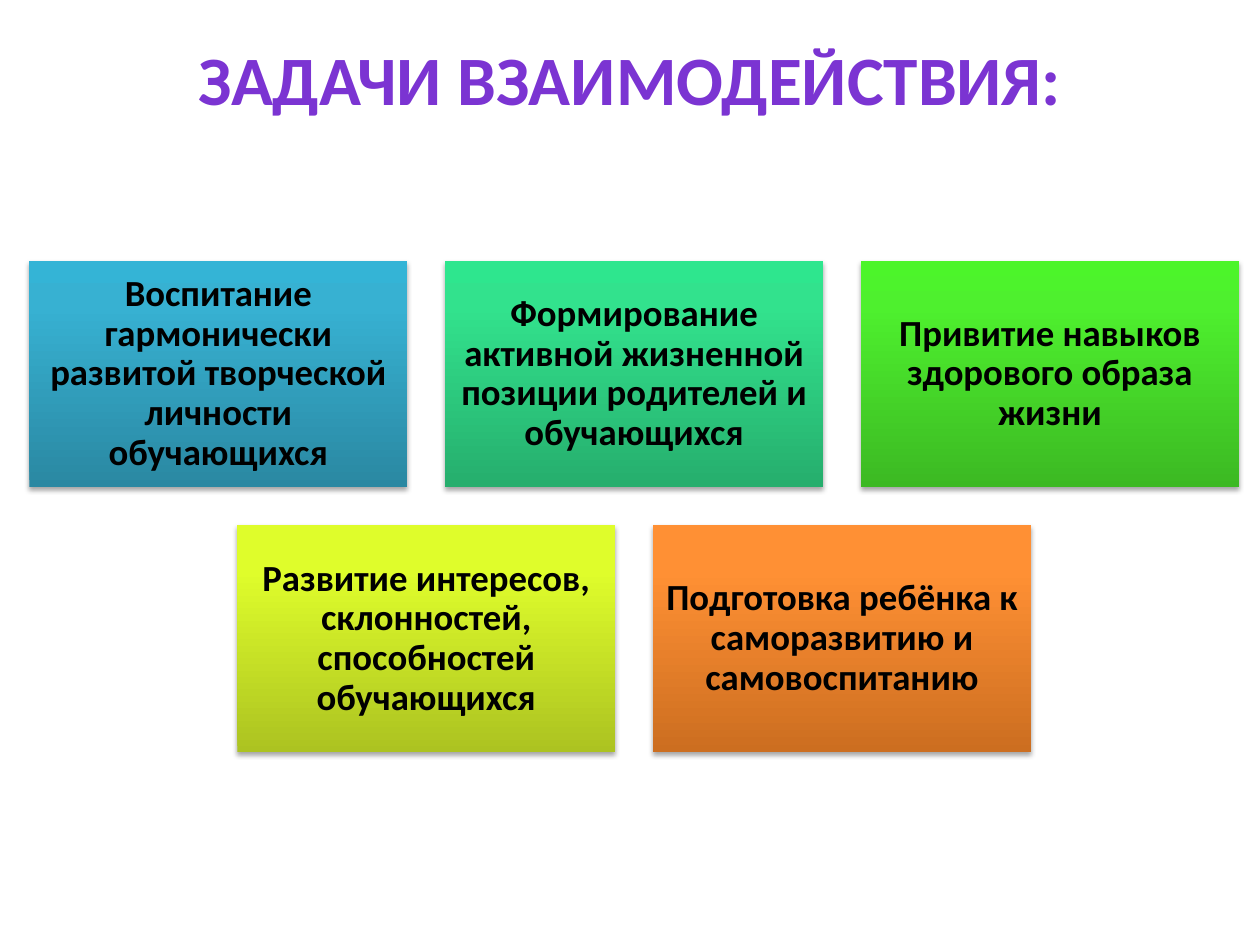
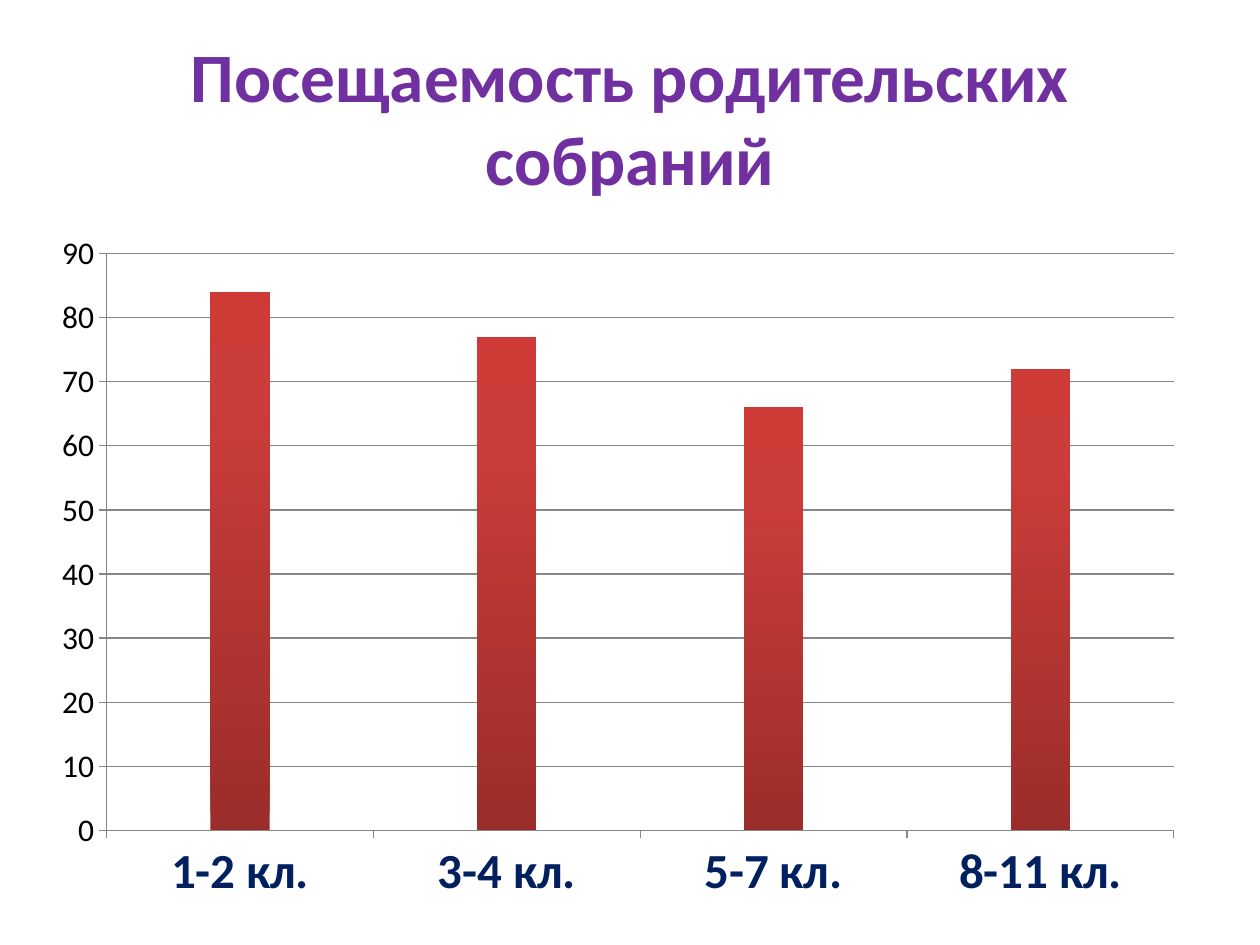
"""Build two slides on cooperation between school and parents."""
from copy import deepcopy
from dataclasses import dataclass

from lxml import etree
from pptx import Presentation
from pptx.chart.data import CategoryChartData
from pptx.dml.color import RGBColor
from pptx.dml.fill import FillFormat
from pptx.enum import chart as ch, shapes, text
from pptx.oxml.ns import qn
from pptx.slide import Slide
from pptx.text.text import TextFrame
from pptx.util import Pt

FONT = "Calibri"
BLACK, NAVY, VIOLET, PURPLE, GRAY = "000000", "002060", "7B34D2", "7030A0", "868686"
BAR_RED = ("9B2D2A", "CB3D3A", "CE3B37")
STOPS = (0, 0.8, 1)

CARD_W, CARD_H, GAP = 216, 129.6, 21.6
CARDS_CENTER, CARDS_TOP = 362.4, 149


@dataclass
class Card:
    """A task and the bottom-to-top colours of its card."""
    task: str
    colors: tuple[str, str, str]


CARD_ROWS = (
    (
        Card("Воспитание гармонически развитой творческой личности обучающихся",
             ("2A88A2", "37B1D2", "34B4D6")),
        Card("Формирование активной жизненной позиции родителей и обучающихся",
             ("26AE6D", "32E28D", "2EE68E")),
        Card("Привитие навыков здорового образа жизни",
             ("3CB923", "4EF02E", "4CF52A")),
    ),
    (
        Card("Развитие интересов, склонностей, способностей обучающихся",
             ("ACC321", "DFFD2B", "E1FF2B")),
        Card("Подготовка ребёнка к саморазвитию и самовоспитанию",
             ("CC6E20", "FF9034", "FF9136")),
    ),
)

CLASSES = ("1-2 кл.", "3-4 кл.", "5-7 кл.", "8-11 кл.")
ATTENDANCE = {
    "Series 1": (None,) * 4,
    "Series 2": (84, 77, 66, 72),
    "Series 3": (None,) * 4,
}


def rgb(color: str) -> RGBColor:
    """Turn a hex string into a colour."""
    return RGBColor.from_string(color)


def style_font(font, size: float, color: str, bold: bool = True) -> None:
    """Apply the common typeface with a size, colour and weight."""
    font.name, font.size, font.bold = FONT, Pt(size), bold
    font.color.rgb = rgb(color)


def fill_gradient(fill: FillFormat, owner: etree.ElementBase, colors: tuple[str, ...]) -> None:
    """Fill from bottom to top with three colours."""
    fill.gradient()
    fill.gradient_angle = 90
    stops = next(owner.iter(qn("a:gsLst")))
    stops.append(deepcopy(stops[-1]))
    for stop, position, color in zip(fill.gradient_stops, STOPS, colors):
        stop.position = position
        stop.color.rgb = rgb(color)


def add_shadow(sp) -> None:
    """Give a shape a soft shadow below it."""
    sp.shadow.inherit = False
    effects = sp._element.spPr.find(qn("a:effectLst"))
    shadow = etree.SubElement(effects, qn("a:outerShdw"), blurRad=str(Pt(3.1)),
                              dist=str(Pt(1.8)), dir="5400000", rotWithShape="0")
    color = etree.SubElement(shadow, qn("a:srgbClr"), val=BLACK)
    etree.SubElement(color, qn("a:alpha"), val="35000")


def write_text(tf: TextFrame, words: str, size: float, color: str, spacing: float = 1) -> None:
    """Write one centred bold paragraph in the middle of a frame."""
    tf.text = words
    tf.word_wrap = True
    tf.vertical_anchor = text.MSO_ANCHOR.MIDDLE
    p = tf.paragraphs[0]
    p.alignment = text.PP_ALIGN.CENTER
    p.line_spacing = spacing
    style_font(p.runs[0].font, size, color)


def add_title(s: Slide, words: str, height: float, color: str) -> None:
    """Add the slide title."""
    sp = s.shapes.add_textbox(Pt(36), Pt(21.6), Pt(648), Pt(height))
    write_text(sp.text_frame, words, 39.6, color)


def add_card(s: Slide, card: Card, left: float, top: float) -> None:
    """Add one task card."""
    sp = s.shapes.add_shape(shapes.MSO_SHAPE.RECTANGLE,
                            Pt(left), Pt(top), Pt(CARD_W), Pt(CARD_H))
    fill_gradient(sp.fill, sp._element.spPr, card.colors)
    sp.line.fill.background()
    add_shadow(sp)
    tf = sp.text_frame
    tf.margin_left = tf.margin_right = tf.margin_top = tf.margin_bottom = Pt(6.5)
    write_text(tf, card.task, 21, BLACK, 0.9)


def add_attendance_chart(s: Slide) -> None:
    """Add the column chart of attendance by class."""
    data = CategoryChartData()
    data.categories = CLASSES
    for name, values in ATTENDANCE.items():
        data.add_series(name, values)
    chart = s.shapes.add_chart(ch.XL_CHART_TYPE.COLUMN_CLUSTERED, Pt(22.3), Pt(126),
                               Pt(661.7), Pt(397.4), data).chart
    chart.has_legend = chart.has_title = False
    style_font(chart.font, 18, BLACK, False)

    plot = chart.plots[0]
    plot.gap_width, plot.overlap, plot.vary_by_categories = 150, 0, False
    for series in plot.series:
        series.invert_if_negative = False
        fill_gradient(series.format.fill, series._element, BAR_RED)

    values_axis = chart.value_axis
    values_axis.minimum_scale, values_axis.maximum_scale = 0, 90
    values_axis.major_unit = 10
    values_axis.has_major_gridlines = True
    for axis in (chart.category_axis, values_axis):
        axis.major_tick_mark = ch.XL_TICK_MARK.OUTSIDE
    for lines in (chart.category_axis, values_axis, values_axis.major_gridlines):
        lines.format.line.color.rgb = rgb(GRAY)
        lines.format.line.width = Pt(0.75)
    style_font(chart.category_axis.tick_labels.font, 28, NAVY)


def build_tasks(s: Slide) -> None:
    """Lay the task cards out in centred rows."""
    add_title(s, "ЗАДАЧИ ВЗАИМОДЕЙСТВИЯ:", 46, VIOLET)
    for row, cards in enumerate(CARD_ROWS):
        row_width = len(cards) * (CARD_W + GAP) - GAP
        for column, card in enumerate(cards):
            add_card(s, card, CARDS_CENTER - row_width / 2 + column * (CARD_W + GAP),
                     CARDS_TOP + row * (CARD_H + GAP))


def build_attendance(s: Slide) -> None:
    """Show attendance at parent meetings."""
    add_title(s, "Посещаемость родительских собраний", 90, PURPLE)
    add_attendance_chart(s)


def main() -> None:
    """Build and save the presentation."""
    prs = Presentation()
    prs.slide_width, prs.slide_height = Pt(720), Pt(540)
    for build in (build_tasks, build_attendance):
        build(prs.slides.add_slide(prs.slide_layouts[6]))
    prs.save("out.pptx")


if __name__ == "__main__":
    main()
